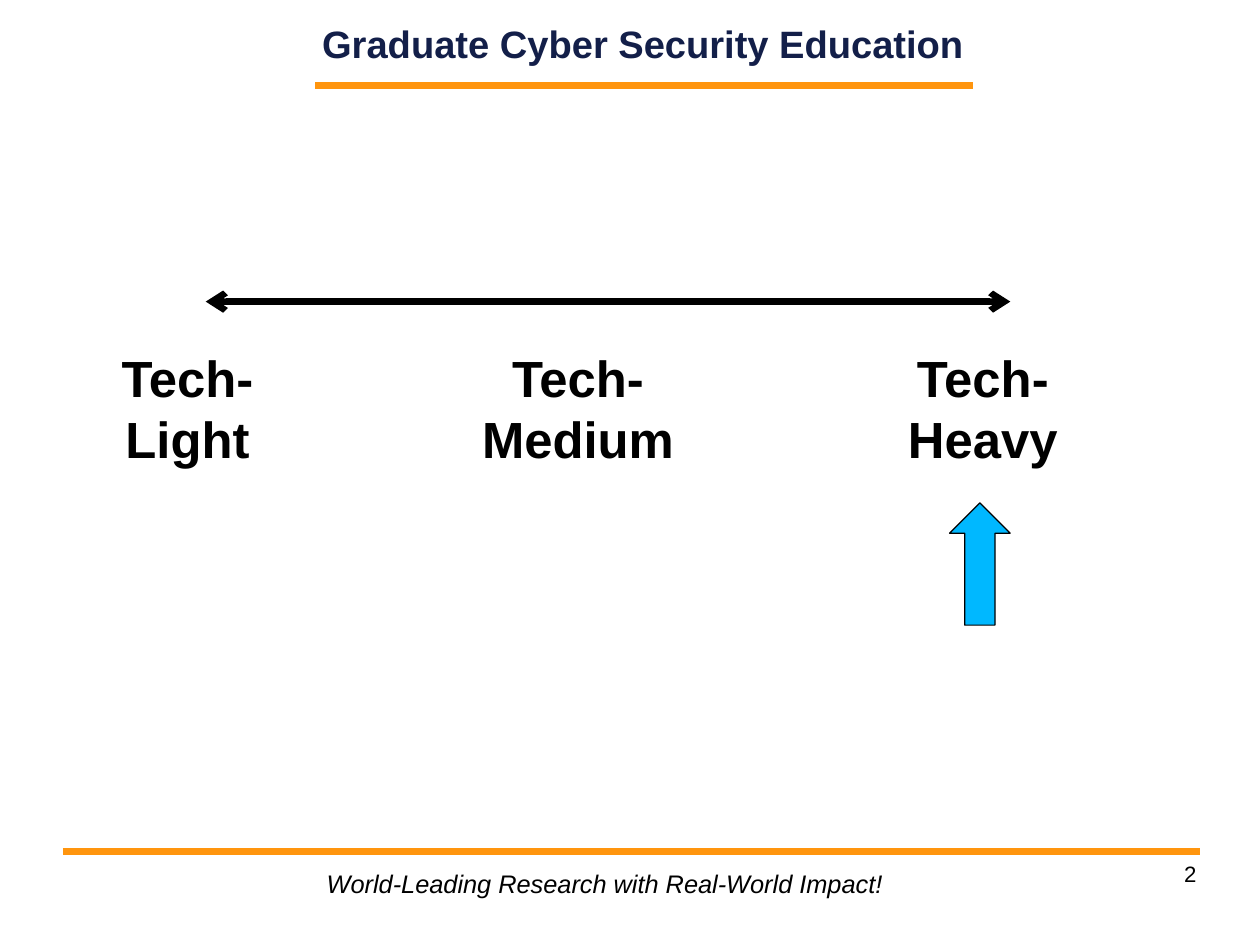
from pptx import Presentation
from pptx.dml.color import RGBColor
from pptx.enum.shapes import MSO_CONNECTOR, MSO_SHAPE
from pptx.enum.text import MSO_ANCHOR, PP_ALIGN
from pptx.oxml.ns import qn
from pptx.util import Pt
from lxml.etree import SubElement

# Content: left, top, width, height in points
TITLE = ("Graduate Cyber Security Education", (173.5, 0, 463, 54))
MOTTO = ("World-Leading Research with Real-World Impact!", (198.7, 543.6, 365.8, 26.6))
NUMBER = ("2", (568.8, 542.2, 185, 41))
LEVELS = [("Light", 118.2, 98), ("Heavy", 619.2, 109.4),
          ("Medium", 364.2, 136.8)]  # name, centre, width
RULES = [(198.7, 612.7, 54), (39.6, 756, 536.4)]  # left, right, height
SCALE = (129.6, 636.5, 190)
MARKER = (598.2, 316.8, 38.2, 77)
LABEL_TOP, LABEL_HEIGHT = 214.6, 85
ORANGE, BLACK, NAVY, BLUE = "FF950E", "000000", "131F49", "00B8FF"

deck = Presentation()
deck.slide_width, deck.slide_height = Pt(793.75), Pt(595.25)
slide = deck.slides.add_slide(deck.slide_layouts[6])


def paint(target, color):
    target.rgb = RGBColor.from_string(color)


def add_text(lines, box, font, color=BLACK, align=PP_ALIGN.CENTER,
             anchor=MSO_ANCHOR.TOP, inset=0, wrap=True):
    frame = slide.shapes.add_textbox(*map(Pt, box)).text_frame
    layout = {"word_wrap": wrap, "vertical_anchor": anchor,
              "margin_left": Pt(2 * inset), "margin_right": Pt(2 * inset),
              "margin_top": Pt(inset), "margin_bottom": Pt(inset)}
    for name, value in layout.items():
        setattr(frame, name, value)
    frame.text = "\n".join(lines)
    for para in frame.paragraphs:
        para.alignment = align
        for name, value in {"name": "Arial", **font}.items():
            setattr(para.font, name, value)
        paint(para.font.color, color)


def add_line(left, right, height, color, width, arrows=False):
    line = slide.shapes.add_connector(
        MSO_CONNECTOR.STRAIGHT, Pt(left), Pt(height), Pt(right), Pt(height))
    line.line.width = Pt(width)
    paint(line.line.color, color)
    if arrows:
        stroke = line._element.spPr.find(qn("a:ln"))
        for end in ("a:headEnd", "a:tailEnd"):
            SubElement(stroke, qn(end), type="arrow")
    SubElement(line._element.spPr, qn("a:effectLst"))


# Frame: rules, title and footer
for rule in RULES:
    add_line(*rule, ORANGE, 4.31)
add_text([NUMBER[0]], NUMBER[1], {"size": Pt(14)}, align=PP_ALIGN.RIGHT)
add_text([MOTTO[0]], MOTTO[1], {"size": Pt(16), "italic": True},
         align=PP_ALIGN.LEFT, inset=3.6, wrap=False)
add_text([TITLE[0]], TITLE[1], {"size": Pt(24), "bold": True}, NAVY,
         anchor=MSO_ANCHOR.MIDDLE)

# Scale with its three levels
add_line(*SCALE, BLACK, 4, arrows=True)
for level, centre, width in LEVELS:
    box = (centre - width / 2, LABEL_TOP, width, LABEL_HEIGHT)
    add_text(["Tech-", level], box, {"size": Pt(32), "bold": True},
             inset=3.6, wrap=False)

# Marker under the heavy level
marker = slide.shapes.add_shape(MSO_SHAPE.UP_ARROW, *map(Pt, MARKER))
marker.shadow.inherit = False
marker.fill.solid()
paint(marker.fill.fore_color, BLUE)
paint(marker.line.color, BLACK)
marker.line.width = Pt(0.75)

deck.save("out.pptx")
